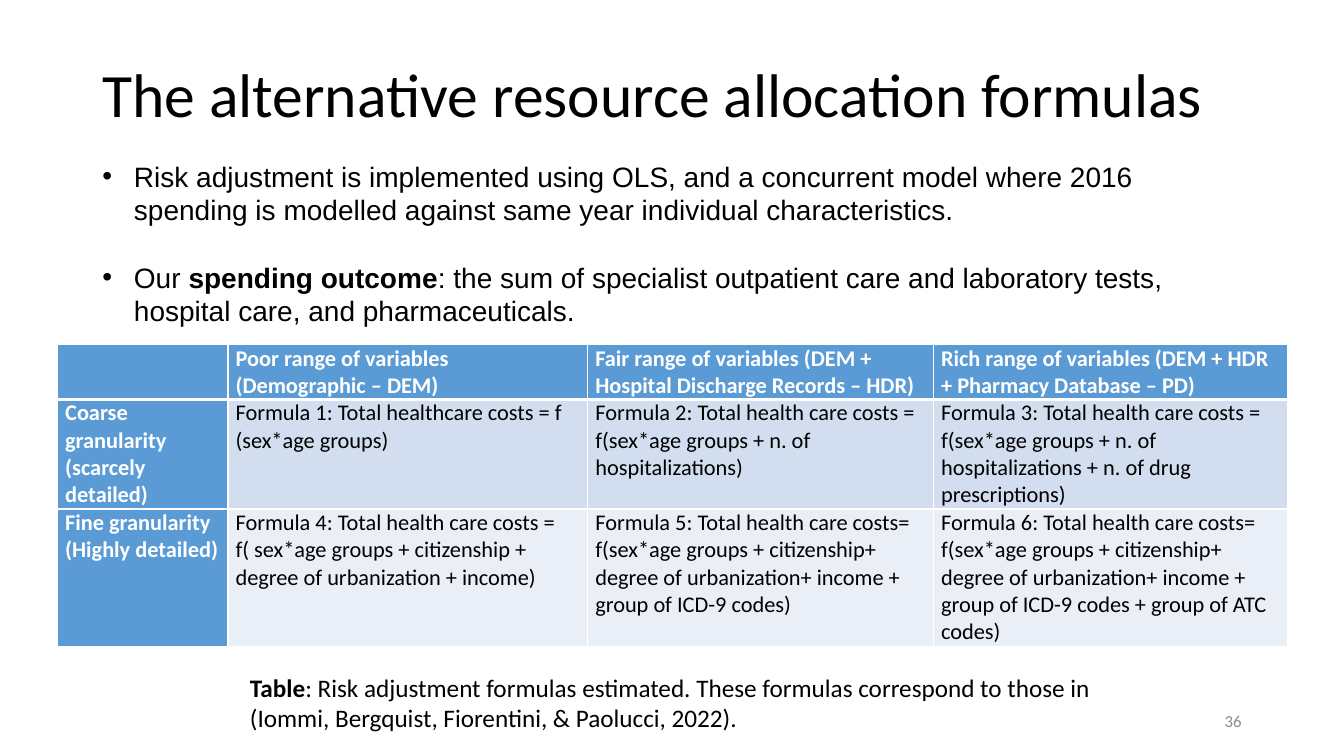
import pptx
import pptx.util
import pptx.dml.color
import pptx.enum.text
import pptx.oxml
import pptx.oxml.ns
import dataclasses

Pt = pptx.util.Pt
Rgb = pptx.dml.color.RGBColor.from_string
Align = pptx.enum.text.PP_ALIGN
Anchor = pptx.enum.text.MSO_ANCHOR
Fit = pptx.enum.text.MSO_AUTO_SIZE


@dataclasses.dataclass(frozen=True)
class Theme:
    ink: str = "000000"
    paper: str = "FFFFFF"
    grey: str = "8C8C8C"
    head: str = "5B9BD5"
    bands: tuple = ("D2DEEF", "EAEFF7")
    sans: str = "Calibri"
    list_font: str = "Arial"
    title: int = 44
    body: int = 20
    caption: int = 18
    cell: int = 16
    page: int = 12


THEME = Theme()

BULLETS = [
    [("Risk adjustment is implemented using OLS, and a concurrent model where 2016 "
      "spending is modelled against same year individual characteristics.", False)],
    [("Our ", False), ("spending outcome", True),
     (": the sum of specialist outpatient care and laboratory tests, hospital care, "
      "and pharmaceuticals.", False)],
]

CAPTION = [
    ("Table", True),
    (": Risk adjustment formulas estimated. These formulas correspond to those in "
     "(Iommi, Bergquist, Fiorentini, & Paolucci, 2022).", False),
]

WIDTHS = (121.7, 257, 247, 252.7)
HEIGHTS = (39, 78, 98)
ROWS = [
    ["",
     "Poor range of variables (Demographic – DEM)",
     "Fair range of variables (DEM + Hospital Discharge Records – HDR)",
     "Rich range of variables (DEM + HDR + Pharmacy Database – PD)"],
    ["Coarse granularity (scarcely detailed)",
     "Formula 1: Total healthcare costs = f (sex*age groups)",
     "Formula 2: Total health care costs = f(sex*age groups + n. of hospitalizations)",
     "Formula 3: Total health care costs = f(sex*age groups + n. of hospitalizations "
     "+ n. of drug prescriptions)"],
    ["Fine granularity (Highly detailed)",
     "Formula 4: Total health care costs = f( sex*age groups + citizenship + "
     "degree of urbanization + income)",
     "Formula 5: Total health care costs= f(sex*age groups + citizenship+ "
     "degree of urbanization+ income + group of ICD-9 codes)",
     "Formula 6: Total health care costs= f(sex*age groups + citizenship+ "
     "degree of urbanization+ income + group of ICD-9 codes + group of ATC codes)"],
]


def add_runs(para, parts, size, color=THEME.ink, font=THEME.sans):
    for text, bold in parts:
        run = para.add_run()
        run.text = text
        run.font.name = font
        run.font.size = Pt(size)
        run.font.bold = bold
        run.font.color.rgb = Rgb(color)


def place(shape, left, top, width, height):
    shape.left, shape.top = Pt(left), Pt(top)
    shape.width, shape.height = Pt(width), Pt(height)


def set_frame(shape, anchor):
    frame = shape.text_frame
    frame.word_wrap = True
    frame.auto_size = Fit.NONE
    frame.vertical_anchor = anchor
    return frame


def fill_title(shape, text):
    place(shape, 66, 17.25, 828, 104.4)
    para = set_frame(shape, Anchor.MIDDLE).paragraphs[0]
    para.alignment = Align.LEFT
    para.line_spacing = 0.9
    add_runs(para, [(text, False)], THEME.title)


def fill_list(shape, items):
    place(shape, 66, 110.2, 828, 128.2)
    frame = set_frame(shape, Anchor.TOP)
    for index, parts in enumerate(items):
        para = frame.add_paragraph() if index else frame.paragraphs[0]
        para.space_before = Pt(24 if index else 0)
        props = para._p.get_or_add_pPr()
        props.set("marL", str(Pt(22.5)))
        props.set("indent", str(-Pt(22.5)))
        add_runs(para, parts, THEME.body, font=THEME.list_font)


def add_label(slide, box, parts, size, color=THEME.ink, align=Align.LEFT,
              anchor=Anchor.TOP):
    shape = slide.shapes.add_textbox(*map(Pt, box))
    para = set_frame(shape, anchor).paragraphs[0]
    para.alignment = align
    add_runs(para, parts, size, color)


def set_edges(cell, top, bottom):
    props = cell._tc.get_or_add_tcPr()
    sides = {"lnL": 1, "lnR": 1, "lnT": top, "lnB": bottom}
    for index, (side, width) in enumerate(sides.items()):
        props.insert(index, pptx.oxml.parse_xml(
            f'<a:{side} {pptx.oxml.ns.nsdecls("a")} w="{Pt(width)}"><a:solidFill>'
            f'<a:srgbClr val="{THEME.paper}"/></a:solidFill></a:{side}>'))


def fill_cell(cell, text, row, col):
    is_head = row == 0 or col == 0
    cell.margin_left = cell.margin_right = Pt(5.4)
    cell.margin_top = cell.margin_bottom = 0
    cell.fill.solid()
    cell.fill.fore_color.rgb = Rgb(THEME.head if is_head else THEME.bands[row - 1])
    set_edges(cell, 3 if row == 1 else 1, 3 if row == 0 else 1)
    if text:
        add_runs(cell.text_frame.paragraphs[0], [(text, is_head)], THEME.cell,
                 THEME.paper if is_head else THEME.ink)


def add_grid(slide):
    grid = slide.shapes.add_table(
        len(ROWS), len(WIDTHS), Pt(41.2), Pt(246.2),
        Pt(sum(WIDTHS)), Pt(sum(HEIGHTS))).table
    for col, width in enumerate(WIDTHS):
        grid.columns[col].width = Pt(width)
    for row, height in enumerate(HEIGHTS):
        grid.rows[row].height = Pt(height)
        for col, text in enumerate(ROWS[row]):
            fill_cell(grid.cell(row, col), text, row, col)


def main():
    deck = pptx.Presentation()
    deck.slide_width, deck.slide_height = Pt(960), Pt(540)
    slide = deck.slides.add_slide(deck.slide_layouts[1])

    # Title and list
    fill_title(slide.shapes.title, "The alternative resource allocation formulas")
    fill_list(slide.placeholders[1], BULLETS)

    # Formulas by granularity and range of variables
    add_grid(slide)

    # Caption and page number
    add_label(slide, (171.4, 476.6, 653.8, 72.7), CAPTION, THEME.caption)
    add_label(slide, (678, 500.5, 216, 28.8), [("36", False)], THEME.page,
              THEME.grey, Align.RIGHT, Anchor.MIDDLE)

    deck.save("out.pptx")


if __name__ == "__main__":
    main()
